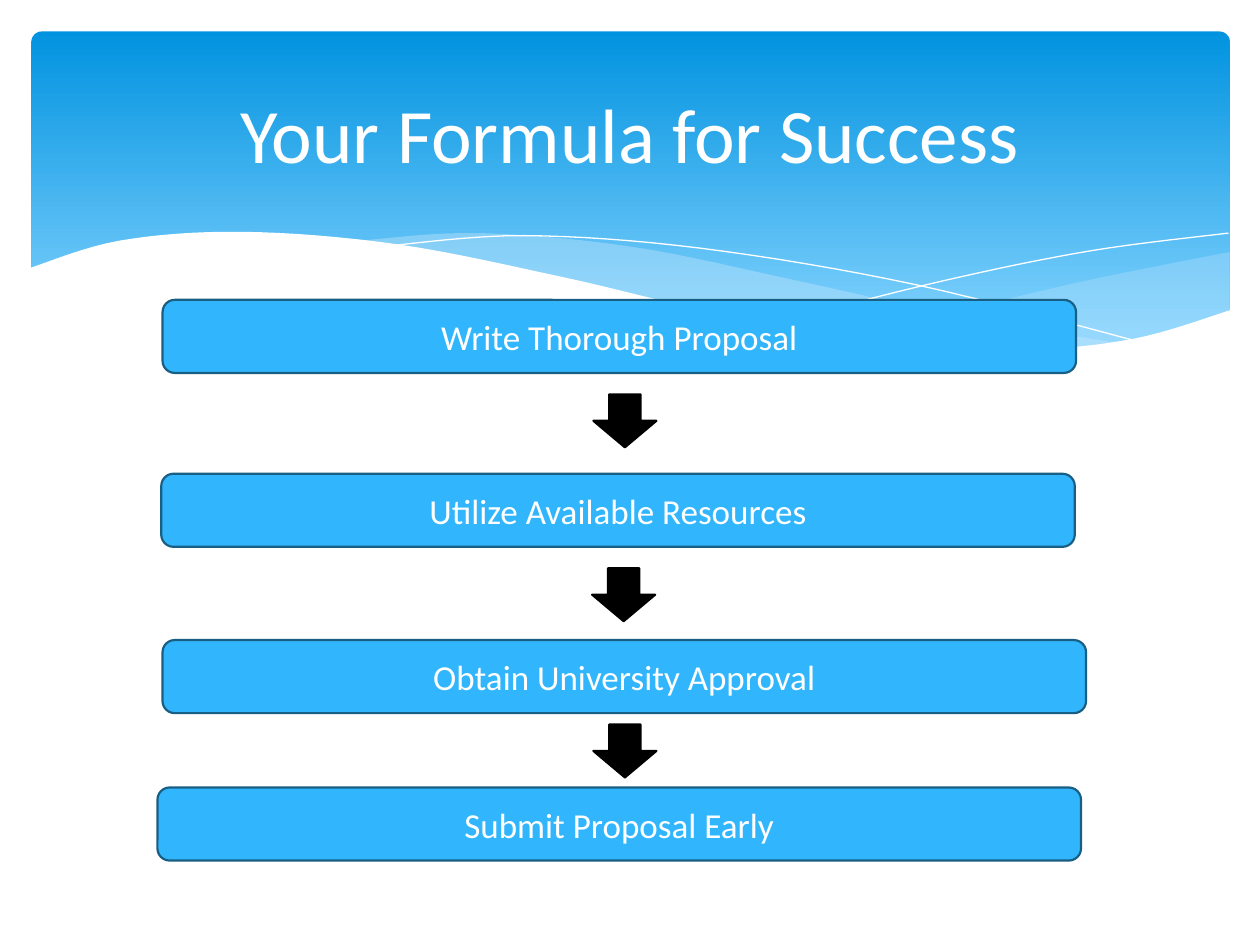
from pptx import Presentation
from pptx.dml.color import RGBColor as RGB
from pptx.enum.shapes import MSO_SHAPE as Kind
from pptx.enum.text import MSO_ANCHOR as Anchor, PP_ALIGN as Align
from pptx.oxml.ns import qn
from pptx.util import Inches, Pt
from lxml.etree import SubElement

# Content
TITLE = ("Your Formula for Success", (0.5, 0.37, 9, 1.37))
STEPS = [  # text, left, top, width
    ("Write Thorough Proposal", 1.29, 2.38, 7.25),
    ("Utilize Available Resources", 1.28, 3.76, 7.25),
    ("Obtain University Approval", 1.29, 5.08, 7.33),
    ("Submit Proposal Early", 1.25, 6.25, 7.33),
]
ARROWS = [(4.71, 3.13), (4.7, 4.51), (4.71, 5.75)]
BOX_H, ARROW_W, ARROW_H = 0.58, 0.5, 0.42

# Look
THEME = {
    "font": "Calibri", "title": 44, "step": 20, "edge": 1.25,
    "text": "FFFFFF", "box": "31B6FD", "rim": "195F84",
    "arrow": "000000", "page": "FFFFFF", "mist": "C6E7FC",
    "sky": [(0, "0293E0"), (0.9, "83D3FE")],
}

# Banner waves: smooth edges by their knots, fill, opacity in percent
WAVES = [
    ([[(9.76, 2), (8.61, 2.23), (7.53, 2.48), (6.61, 2.65)],
      [(6.61, 2.65), (7.45, 2.75), (8.24, 2.77), (9.05, 2.69), (9.76, 2.47)]],
     "mist", 29),
    ([[(8.93, 2.73), (7.75, 2.54), (6.29, 2.22), (5.02, 1.96), (3.8, 1.85),
       (2.86, 1.91)],
      [(2.86, 1.91), (4.49, 2.22), (6.01, 2.55), (7.22, 2.74), (8.18, 2.78),
       (8.93, 2.73)]], "mist", 40),
    ([[(3.09, 1.95), (4.16, 1.87), (5.56, 1.97), (7.27, 2.26), (9.07, 2.72)]],
     None, 100),
    ([[(6.13, 2.57), (7.48, 2.23), (8.66, 1.99), (9.75, 1.85)]], None, 100),
    ([[(9.77, 2.46), (8.99, 2.69), (8.09, 2.77), (6.88, 2.68), (5.55, 2.45),
       (4.47, 2.2), (3.16, 1.94), (1.93, 1.84), (0.95, 1.91), (0.23, 2.13)],
      [(0.23, 3.29), (9.77, 3.29)]], "page", 100),
]
CUTS = 8  # line pieces between two knots


def hue(name):
    return RGB.from_string(THEME[name])


def paint(shape, fill, line=None, width=0):
    shape.shadow.inherit = False
    if fill:
        shape.fill.solid()
        shape.fill.fore_color.rgb = hue(fill)
    else:
        shape.fill.background()
    if line:
        shape.line.color.rgb = hue(line)
        shape.line.width = Pt(width)
    else:
        shape.line.fill.background()


def write(shape, text, size):
    frame = shape.text_frame
    for key, val in {"word_wrap": True, "vertical_anchor": Anchor.MIDDLE}.items():
        setattr(frame, key, val)
    para = frame.paragraphs[0]
    para.alignment = Align.CENTER
    run = para.add_run()
    run.text = text
    for key, val in {"name": THEME["font"], "size": Pt(THEME[size])}.items():
        setattr(run.font, key, val)
    run.font.color.rgb = hue("text")


def add(shapes, kind, *box):
    return shapes.add_shape(kind, *map(Inches, box))


def banner(shapes):
    panel = add(shapes, Kind.ROUNDED_RECTANGLE, 0.25, 0.25, 9.51, 2.7)
    panel.adjustments[0] = 0.03
    paint(panel, None)
    panel.fill.gradient()
    panel.fill.gradient_angle = 270
    for stop, (pos, tone) in zip(panel.fill.gradient_stops, THEME["sky"]):
        stop.position = pos
        stop.color.rgb = RGB.from_string(tone)


def blend(a, b, c, d, t):
    """Catmull-Rom value between b and c."""
    return b + t / 2 * (c - a + t * (2 * a - 5 * b + 4 * c - d
                                     + t * (3 * (b - c) + d - a)))


def curve(knots):
    ends = [knots[0], *knots, knots[-1]]
    dots = [knots[0]]
    for four in zip(ends, ends[1:], ends[2:], ends[3:]):
        for cut in range(1, CUTS + 1):
            dots.append(tuple(blend(*axis, cut / CUTS) for axis in zip(*four)))
    return dots


def wave(shapes, edges, fill, alpha):
    first, *rest = [(Inches(x), Inches(y))
                    for edge in edges for x, y in curve(edge)]
    pen = shapes.build_freeform(*first)
    pen.add_line_segments(rest, close=bool(fill))
    shape = pen.convert_to_shape()
    paint(shape, fill, None if fill else "page")
    if alpha < 100:
        tone = next(shape.element.spPr.iter(qn("a:srgbClr")))
        SubElement(tone, qn("a:alpha")).set("val", str(alpha * 1000))


def main():
    deck = Presentation()
    deck.slide_width, deck.slide_height = Inches(10), Inches(7.5)
    shapes = deck.slides.add_slide(deck.slide_layouts[6]).shapes

    # Banner and title
    banner(shapes)
    for item in WAVES:
        wave(shapes, *item)
    text, box = TITLE
    write(shapes.add_textbox(*map(Inches, box)), text, "title")

    # Steps and the arrows between them
    for text, left, top, width in STEPS:
        step = add(shapes, Kind.ROUNDED_RECTANGLE, left, top, width, BOX_H)
        paint(step, "box", "rim", THEME["edge"])
        write(step, text, "step")
    for left, top in ARROWS:
        arrow = add(shapes, Kind.DOWN_ARROW, left, top, ARROW_W, ARROW_H)
        paint(arrow, "arrow", "arrow", THEME["edge"])

    deck.save("out.pptx")


if __name__ == "__main__":
    main()
